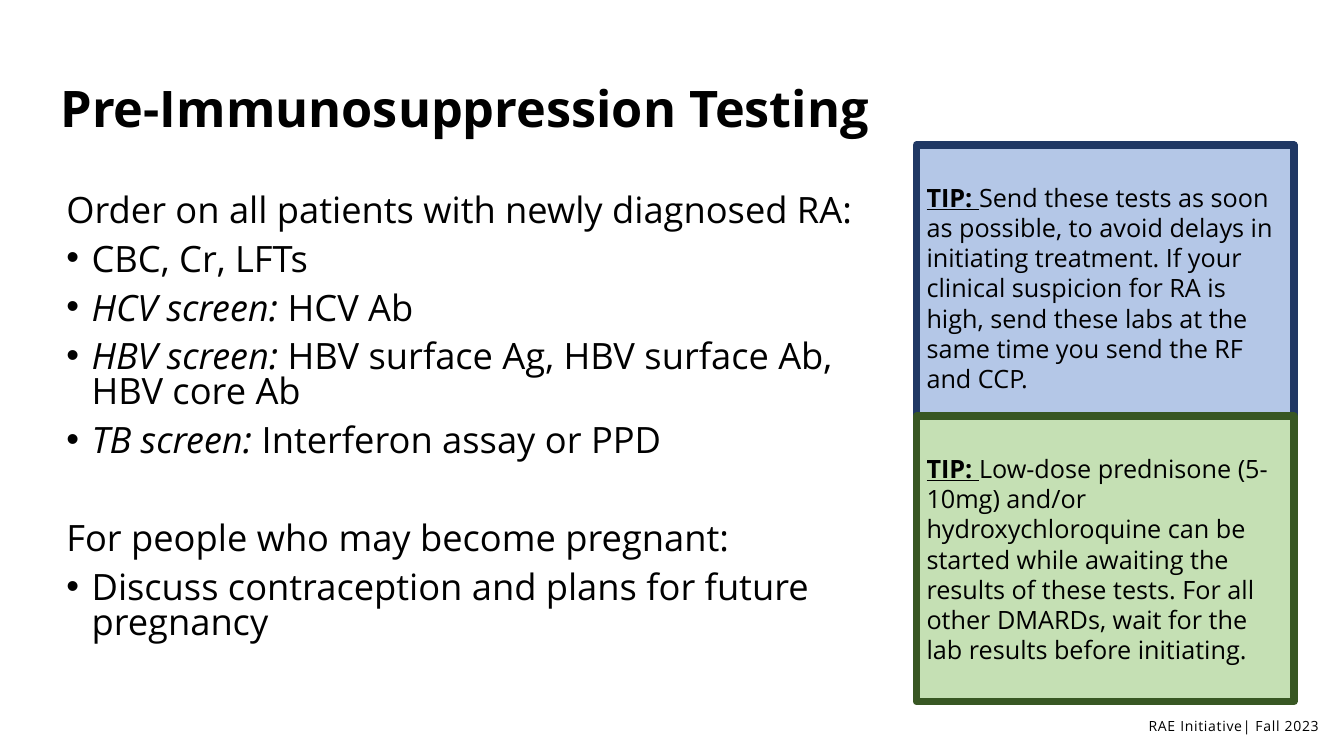
from dataclasses import dataclass

import lxml.etree
import pptx
import pptx.dml.color
import pptx.enum.shapes
import pptx.enum.text
import pptx.oxml.ns
import pptx.util

RGBColor = pptx.dml.color.RGBColor
ALIGN = pptx.enum.text.PP_ALIGN
ANCHOR = pptx.enum.text.MSO_ANCHOR
Pt = pptx.util.Pt

BLACK = RGBColor(0x00, 0x00, 0x00)
PALE_BLUE = RGBColor(0xB4, 0xC7, 0xE7)
NAVY = RGBColor(0x20, 0x38, 0x64)
PALE_GREEN = RGBColor(0xC5, 0xE0, 0xB4)
DARK_GREEN = RGBColor(0x38, 0x57, 0x23)

FONT = "Open Sans"
WIDTH = pptx.util.Inches(13.33)
HEIGHT = pptx.util.Inches(7.5)
INDENT = pptx.util.Inches(0.25)


@dataclass(frozen=True)
class Area:
    """A rectangle in percent of the slide's width and height."""
    x: float
    y: float
    w: float
    h: float

    def box(self) -> tuple[int, int, int, int]:
        return (round(WIDTH * self.x / 100), round(HEIGHT * self.y / 100),
                round(WIDTH * self.w / 100), round(HEIGHT * self.h / 100))


@dataclass(frozen=True)
class Line:
    text: str
    lead: str = ""
    bullet: bool = True
    before: float = 10


@dataclass(frozen=True)
class Tip:
    text: str
    y: float
    fill: RGBColor
    border: RGBColor


TITLE = Area(3.75, 5.07, 86.27, 19.33)
BODY = Area(4.2, 25.2, 61.37, 63.47)
FOOTER = Area(79.45, 94.93, 18.68, 2.27)

LINES = [
    Line("Order on all patients with newly diagnosed RA:", bullet=False),
    Line("CBC, Cr, LFTs"),
    Line("HCV Ab", "HCV screen: "),
    Line("HBV surface Ag, HBV surface Ab, HBV core Ab", "HBV screen: "),
    Line("Interferon assay or PPD", "TB screen: "),
    Line("For people who may become pregnant:", bullet=False, before=45),
    Line("Discuss contraception and plans for future pregnancy"),
]

TIPS = [
    Tip("Send these tests as soon as possible, to avoid delays in initiating "
        "treatment. If your clinical suspicion for RA is high, send these labs "
        "at the same time you send the RF and CCP.",
        19.2, PALE_BLUE, NAVY),
    Tip("Low-dose prednisone (5-10mg) and/or hydroxychloroquine can be started "
        "while awaiting the results of these tests. For all other DMARDs, wait "
        "for the lab results before initiating.",
        55.07, PALE_GREEN, DARK_GREEN),
]


def set_all(obj, values: dict) -> None:
    for name, value in values.items():
        setattr(obj, name, value)


def add_run(p, text: str, size: float, **style):
    r = p.add_run()
    r.text = text
    set_all(r.font, {"name": FONT, "size": Pt(size), **style})
    r.font.color.rgb = BLACK
    return r


def add_bullet(p) -> None:
    pPr = p._p.get_or_add_pPr()
    pPr.set("marL", str(INDENT))
    pPr.set("indent", str(-INDENT))
    for tag, name, value in (("a:buFont", "typeface", "Arial"),
                             ("a:buChar", "char", "•")):
        lxml.etree.SubElement(pPr, pptx.oxml.ns.qn(tag)).set(name, value)


def add_title(s) -> None:
    sp = s.shapes.title
    sp.left, sp.top, sp.width, sp.height = TITLE.box()
    set_all(sp.text_frame, {"vertical_anchor": ANCHOR.MIDDLE, "word_wrap": True})
    p = sp.text_frame.paragraphs[0]
    set_all(p, {"alignment": ALIGN.LEFT, "line_spacing": 0.9})
    add_run(p, "Pre-Immunosuppression Testing", 36, bold=True)


def add_body(s) -> None:
    tf = s.shapes.add_textbox(*BODY.box()).text_frame
    tf.word_wrap = True
    for i, line in enumerate(LINES):
        p = tf.add_paragraph() if i else tf.paragraphs[0]
        set_all(p, {"line_spacing": 0.8, "space_before": Pt(line.before)})
        if line.bullet:
            add_bullet(p)
        if line.lead:
            add_run(p, line.lead, 25.9, italic=True)
        add_run(p, line.text, 25.9)


def add_tip(s, tip: Tip) -> None:
    area = Area(68.2, tip.y, 28.06, 37.73)
    sp = s.shapes.add_shape(pptx.enum.shapes.MSO_SHAPE.RECTANGLE, *area.box())
    sp.shadow.inherit = False
    sp.fill.solid()
    sp.fill.fore_color.rgb = tip.fill
    sp.line.color.rgb = tip.border
    sp.line.width = Pt(5.5)
    set_all(sp.text_frame, {"word_wrap": True, "vertical_anchor": ANCHOR.MIDDLE})
    p = sp.text_frame.paragraphs[0]
    p.alignment = ALIGN.LEFT
    add_run(p, "TIP: ", 18, bold=True, underline=True)
    add_run(p, tip.text, 18)


def add_footer(s) -> None:
    tf = s.shapes.add_textbox(*FOOTER.box()).text_frame
    set_all(tf, {"word_wrap": True, "margin_left": 0, "margin_top": 0,
                 "margin_right": 0, "margin_bottom": 0})
    p = tf.paragraphs[0]
    set_all(p, {"alignment": ALIGN.RIGHT, "line_spacing": Pt(12)})
    r = add_run(p, "RAE Initiative| Fall 2023", 10)
    r.font._element.set("spc", "50")


def main() -> None:
    prs = pptx.Presentation()
    set_all(prs, {"slide_width": WIDTH, "slide_height": HEIGHT})
    s = prs.slides.add_slide(prs.slide_layouts[5])
    add_title(s)
    add_body(s)
    for tip in TIPS:
        add_tip(s, tip)
    add_footer(s)
    prs.save("out.pptx")


if __name__ == "__main__":
    main()
